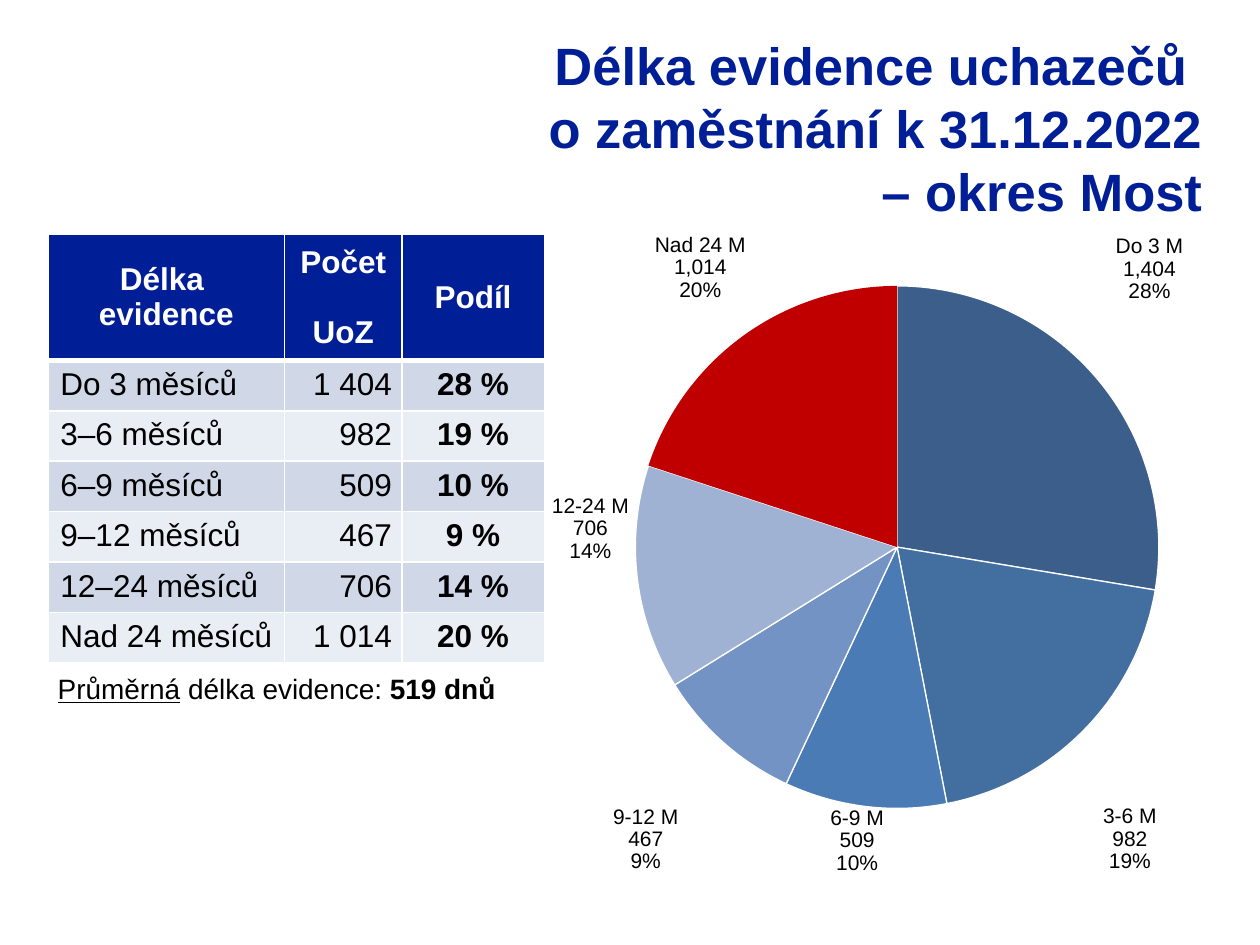
import pptx
import pptx.chart.data
import pptx.dml.color
import pptx.enum.chart
import pptx.enum.text
import pptx.oxml
import pptx.oxml.ns
import pptx.util
from lxml import etree

Inches = pptx.util.Inches
Pt = pptx.util.Pt
ALIGN = pptx.enum.text.PP_ALIGN
qn = pptx.oxml.ns.qn

FONT = "Arial"
COLORS = {
    "navy": "001E96",
    "white": "FFFFFF",
    "black": "000000",
    "band_dark": "D0D8E8",
    "band_light": "E9EDF4",
}
SLICE_COLORS = ["3B5F8A", "436EA0", "4A7BB5", "7393C5", "A0B2D3", "C00000"]

TABLE_ROWS = [
    ("Do 3 měsíců", "1 404", "28 %"),
    ("3–6 měsíců", "982", "19 %"),
    ("6–9 měsíců", "509", "10 %"),
    ("9–12 měsíců", "467", "9 %"),
    ("12–24 měsíců", "706", "14 %"),
    ("Nad 24 měsíců", "1 014", "20 %"),
]
# Category, value, label shift as a share of the chart's width and height
PIE_SLICES = [
    ("Do 3 M", 1404, 0.02, -0.11),
    ("3-6 M", 982, 0.02, 0.11),
    ("6-9 M", 509, 0.03, -0.01),
    ("9-12 M", 467, -0.06, 0.09),
    ("12-24 M", 706, -0.01, -0.13),
    ("Nad 24 M", 1014, 0.01, -0.05),
]


def rgb(hex_color):
    return pptx.dml.color.RGBColor.from_string(hex_color)


def style_font(font, size, color, bold=False):
    font.name = FONT
    font.size = Pt(size)
    font.bold = bold
    font.color.rgb = rgb(color)


def add_run(paragraph, text, size, color, bold=False):
    run = paragraph.add_run()
    run.text = text
    style_font(run.font, size, color, bold)
    return run


def add_text_box(slide, left, top, width, height):
    shape = slide.shapes.add_textbox(
        Inches(left), Inches(top), Inches(width), Inches(height))
    shape.text_frame.word_wrap = True
    return shape.text_frame


def add_title(slide, left, top, width, height):
    frame = add_text_box(slide, left, top, width, height)
    paragraphs = [frame.paragraphs[0], frame.add_paragraph()]
    for paragraph in paragraphs:
        paragraph.alignment = ALIGN.RIGHT
    add_run(paragraphs[0], "Délka evidence uchazečů ", 30, COLORS["navy"], True)
    paragraphs[0].add_line_break()
    add_run(paragraphs[0], "o zaměstnání k 31.12.2022", 30, COLORS["navy"], True)
    add_run(paragraphs[1], "– okres Most", 30, COLORS["navy"], True)


def set_borders(cell, bottom_width):
    properties = cell._tc.get_or_add_tcPr()
    widths = {"L": 1, "R": 1, "T": 1, "B": bottom_width}
    for index, (side, width) in enumerate(widths.items()):
        line = pptx.oxml.parse_xml(
            f'<a:ln{side} {pptx.oxml.ns.nsdecls("a")} w="{Pt(width)}"><a:solidFill>'
            f'<a:srgbClr val="{COLORS["white"]}"/></a:solidFill></a:ln{side}>')
        properties.insert(index, line)


def fill_cell(cell, lines, alignment, color, fill, bold, gap=0, bottom_width=1):
    frame = cell.text_frame
    for index, text in enumerate(lines):
        paragraph = frame.add_paragraph() if index else frame.paragraphs[0]
        paragraph.alignment = alignment
        if index and gap:
            paragraph.space_before = Pt(gap)
        add_run(paragraph, text, 18, color, bold)
    cell.fill.solid()
    cell.fill.fore_color.rgb = rgb(fill)
    set_borders(cell, bottom_width)


def add_duration_table(slide, left, top, widths, header_height, row_height):
    height = header_height + row_height * len(TABLE_ROWS)
    table = slide.shapes.add_table(
        len(TABLE_ROWS) + 1, len(widths), Inches(left), Inches(top),
        Inches(sum(widths)), Inches(height)).table
    for column, width in zip(table.columns, widths):
        column.width = Inches(width)
    for row in table.rows:
        row.height = Inches(row_height)
    table.rows[0].height = Inches(header_height)

    # Header
    headers = [(["Délka ", "evidence"], 0), (["Počet ", "UoZ"], 20), (["Podíl"], 0)]
    for column, (lines, gap) in enumerate(headers):
        cell = table.cell(0, column)
        cell.vertical_anchor = pptx.enum.text.MSO_ANCHOR.MIDDLE
        fill_cell(cell, lines, ALIGN.CENTER, COLORS["white"], COLORS["navy"],
                  True, gap, bottom_width=3)

    # Banded body; the narrow right margin keeps the first column on one line
    alignments = [ALIGN.LEFT, ALIGN.RIGHT, ALIGN.CENTER]
    right_margins = [0.02, 0.08, 0.05]
    for row, values in enumerate(TABLE_ROWS, start=1):
        band = COLORS["band_dark" if row % 2 else "band_light"]
        for column, text in enumerate(values):
            cell = table.cell(row, column)
            cell.margin_left = Inches(0.05 if column else 0.1)
            cell.margin_right = Inches(right_margins[column])
            fill_cell(cell, [text], alignments[column], COLORS["black"], band,
                      bold=column == 2)


def manual_layout(**values):
    items = "".join(f'<c:{key} val="{value}"/>' for key, value in values.items())
    return pptx.oxml.parse_xml(
        f'<c:layout {pptx.oxml.ns.nsdecls("c")}><c:manualLayout>{items}'
        '</c:manualLayout></c:layout>')


def add_pie_chart(slide, left, top, width, height):
    data = pptx.chart.data.CategoryChartData(number_format="#,##0")
    data.categories = [item[0] for item in PIE_SLICES]
    data.add_series("Series 1", [item[1] for item in PIE_SLICES])
    chart = slide.shapes.add_chart(
        pptx.enum.chart.XL_CHART_TYPE.PIE, Inches(left), Inches(top),
        Inches(width), Inches(height), data).chart
    chart.has_title = False
    chart.has_legend = False
    style_font(chart.font, 18, COLORS["black"])

    # Plot area
    plot_area = chart._chartSpace.chart.plotArea
    for layout in plot_area.findall(qn("c:layout")):
        plot_area.remove(layout)
    plot_area.insert(0, manual_layout(
        layoutTarget="inner", xMode="edge", yMode="edge",
        x=0.11, y=0.08, w=0.82, h=0.81))

    # Slices and their labels
    series = chart.plots[0].series[0]
    last = len(PIE_SLICES) - 1
    for index, color in enumerate(SLICE_COLORS):
        point = series.points[index]
        point.format.fill.solid()
        point.format.fill.fore_color.rgb = rgb(color)
        if index < last:
            point.format.line.color.rgb = rgb(COLORS["white"])
            point.format.line.width = Pt(0.75)
        else:
            point.format.line.fill.background()
        style_font(point.data_label.font, 12, COLORS["black"])
        point.data_label.position = pptx.enum.chart.XL_LABEL_POSITION.BEST_FIT

    group = series._element.find(qn("c:dLbls"))
    for leader_lines in group.findall(qn("c:showLeaderLines")):
        leader_lines.set("val", "0")
    labels = group.findall(qn("c:dLbl"))
    for label, (_, _, shift_x, shift_y) in zip(labels, PIE_SLICES):
        label.insert(1, manual_layout(x=shift_x, y=shift_y))
        for flag in ("showVal", "showCatName", "showPercent"):
            label.find(qn(f"c:{flag}")).set("val", "1")
        etree.SubElement(label, qn("c:separator")).text = "\n"


def add_average_note(slide, left, top, width, height):
    paragraph = add_text_box(slide, left, top, width, height).paragraphs[0]
    add_run(paragraph, "Průměrná", 16, COLORS["black"]).font.underline = True
    add_run(paragraph, " délka evidence: ", 16, COLORS["black"])
    add_run(paragraph, "519 dnů", 16, COLORS["black"], True)


def main():
    presentation = pptx.Presentation()
    presentation.slide_width = Inches(10)
    presentation.slide_height = Inches(7.5)
    slide = presentation.slides.add_slide(presentation.slide_layouts[6])
    add_title(slide, 2.4, 0.21, 7.24, 1.5)
    add_duration_table(slide, 0.38, 1.86, [1.88, 0.93, 1.13], 1, 0.4)
    add_pie_chart(slide, 4.38, 1.86, 5.27, 5.13)
    add_average_note(slide, 0.36, 5.28, 3.97, 0.37)
    presentation.save("out.pptx")


if __name__ == "__main__":
    main()
